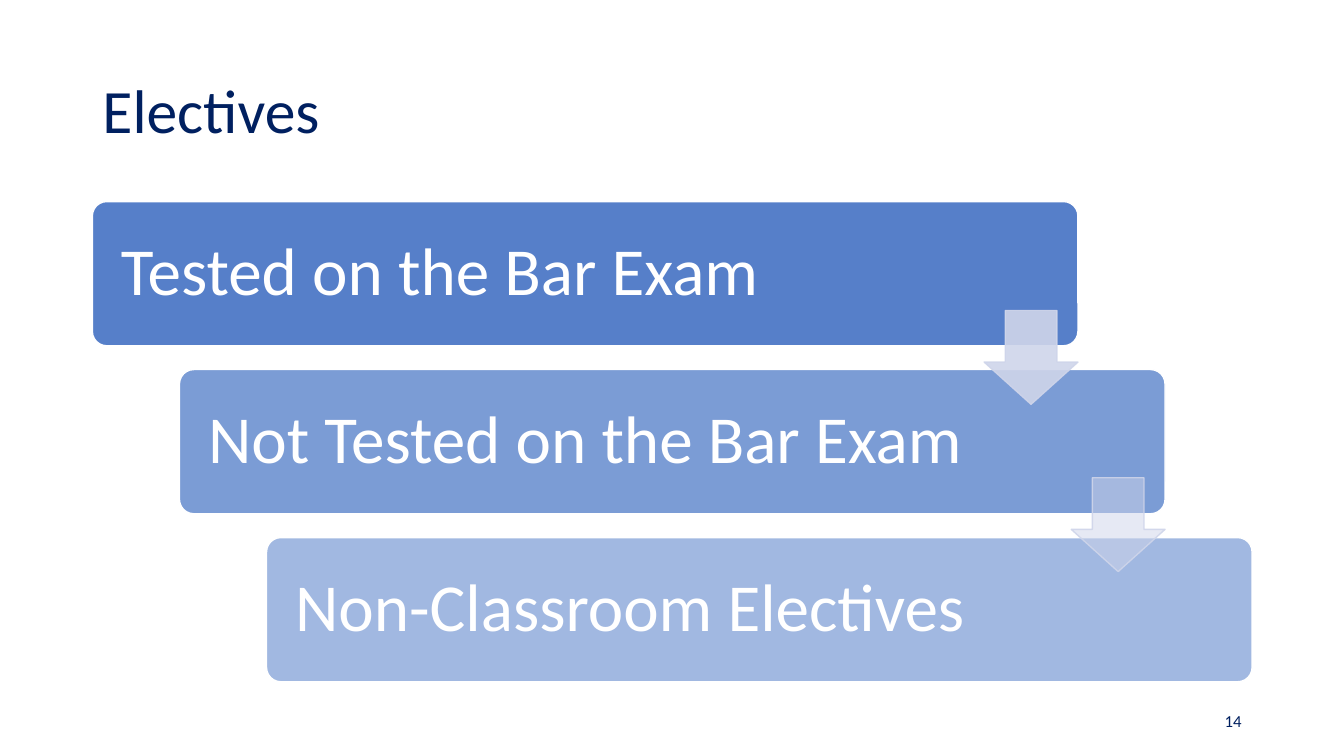
from lxml import etree
from pptx import Presentation
from pptx.dml.color import RGBColor
from pptx.enum import shapes, text
from pptx.oxml.ns import qn
from pptx.util import Pt

TITLE = "Electives"
STEPS = [("Tested on the Bar Exam", 90),
         ("Not Tested on the Bar Exam", 70),
         ("Non-Classroom Electives", 50)]
ARROWS = [90, 50]  # opacity in percent
PAGE = "14"
COLORS = {"navy": "002060", "blue": "4472C4", "pale": "CFD5EA", "white": "FFFFFF"}

LEFT, TOP, WIDE, HIGH = 66, 144, 704, 103
DX, DY = 62.2, 120
SIDE = 67


def paint(fmt, color, alpha=100):
    """Give a fill a solid colour with an opacity in percent."""
    fmt.solid()
    fmt.fore_color.rgb = RGBColor.from_string(COLORS[color])
    if alpha < 100:
        node = fmt._xPr.find(qn("a:solidFill"))[0]
        etree.SubElement(node, qn("a:alpha")).set("val", str(alpha * 1000))


def write(shape, words, size, color, align=text.PP_ALIGN.LEFT, space=1.0, inset=7.2):
    frame = shape.text_frame
    frame.word_wrap = True
    frame.auto_size = text.MSO_AUTO_SIZE.NONE
    frame.vertical_anchor = text.MSO_ANCHOR.MIDDLE
    frame.margin_left = frame.margin_right = Pt(inset)
    para = frame.paragraphs[0]
    para.alignment = align
    para.line_spacing = space
    run = para.add_run()
    run.text = words
    run.font.size = Pt(size)
    run.font.name = "Calibri"
    run.font.color.rgb = RGBColor.from_string(COLORS[color])


def draw(slide, kind, box, adjust, fill, alpha, line, edge=100):
    shape = slide.shapes.add_shape(kind, *map(Pt, box))
    shape.shadow.inherit = False
    for i, value in enumerate(adjust):
        shape.adjustments[i] = value
    paint(shape.fill, fill, alpha)
    paint(shape.line.fill, line, edge)
    shape.line.width = Pt(1)
    return shape


def main():
    deck = Presentation()
    deck.slide_width, deck.slide_height = Pt(960), Pt(540)
    slide = deck.slides.add_slide(deck.slide_layouts[5])

    title = slide.shapes.title
    title.left, title.top, title.width, title.height = map(Pt, (66, 28.75, 828, 104.4))
    write(title, TITLE, 44, "navy", space=0.9)

    for i, (words, alpha) in enumerate(STEPS):
        box = (LEFT + i * DX, TOP + i * DY, WIDE, HIGH)
        bar = draw(slide, shapes.MSO_SHAPE.ROUNDED_RECTANGLE, box, [0.1],
                   "blue", alpha, "white")
        write(bar, words, 48, "white", space=0.9, inset=17.4)

    for i, alpha in enumerate(ARROWS):
        right = LEFT + i * DX + WIDE
        box = (right - SIDE, 221.8 + i * (DY - 0.5), SIDE, SIDE)
        draw(slide, shapes.MSO_SHAPE.DOWN_ARROW, box, [0.55, 0.45],
             "pale", alpha, "pale", 90)

    number = slide.shapes.add_textbox(*map(Pt, (678, 500.5, 216, 28.75)))
    write(number, PAGE, 12, "navy", align=text.PP_ALIGN.RIGHT)
    deck.save("out.pptx")


if __name__ == "__main__":
    main()
